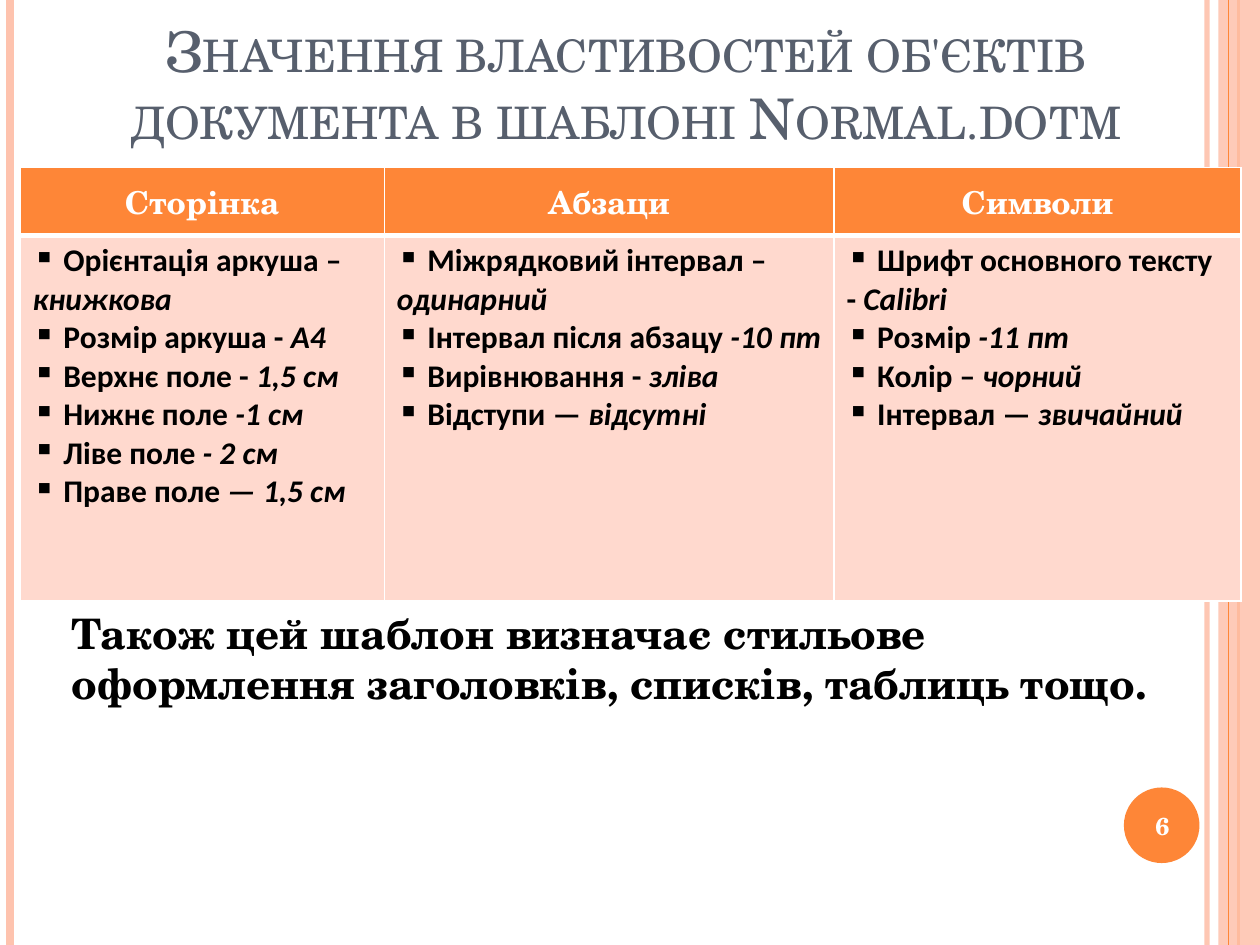
import pptx
import pptx.util
import pptx.dml.color
import pptx.enum.shapes
import pptx.enum.text
import pptx.oxml
from lxml import etree
from pptx.util import Inches

SERIF, SANS = "TeX Gyre Schola", "Calibri"
ORANGE, PEACH, PALE = "FE8637", "FEC3AE", "FFD9CE"
SLATE, WHITE, BLACK = "575F6D", "FFFFFF", "000000"
CENTER = pptx.enum.text.PP_ALIGN.CENTER
MIDDLE = pptx.enum.text.MSO_ANCHOR.MIDDLE
BOTTOM = pptx.enum.text.MSO_ANCHOR.BOTTOM

HEADING = "Значення властивостей об'єктів документа в шаблоні Normal.dotm"
CONCLUSION = "Також цей шаблон визначає стильове оформлення заголовків, списків, таблиць тощо."
PAGE_NUMBER = "6"
OBJECTS = [
    ("Сторінка", 2.89, [
        ("Орієнтація аркуша – ", "книжкова"),
        ("Розмір аркуша -", " А4"),
        ("Верхнє поле -", " 1,5 см"),
        ("Нижнє поле", " -1 см"),
        ("Ліве поле", " - 2 см"),
        ("Праве поле", " — 1,5 см"),
    ]),
    ("Абзаци", 3.57, [
        ("Міжрядковий інтервал – ", "одинарний"),
        ("Інтервал після абзацу", " -10 пт"),
        ("Вирівнювання - ", "зліва"),
        ("Відступи — ", "відсутні"),
    ]),
    ("Символи", 3.23, [
        ("Шрифт основного тексту - ", "Calibri"),
        ("Розмір", " -11 пт"),
        ("Колір – ", "чорний"),
        ("Інтервал — ", "звичайний"),
    ]),
]
ROW_HEIGHTS = [0.54, 2.9]
STRIPES_BEHIND = [(9.58, PEACH, 3, 93), (0.08, PEACH, 4.5, 100), (9.83, ORANGE, 1.5, 100)]
STRIPE_FRONT = (9.75, ORANGE, 0.75, 100)


def rgb(color):
    return pptx.dml.color.RGBColor.from_string(color)


def add_xml(parent, tag, **attributes):
    element = etree.SubElement(parent, pptx.oxml.ns.qn(tag))
    for key, value in attributes.items():
        element.set(key, str(value))
    return element


def set_opacity(fill, percent):
    color = fill._xPr.find(".//" + pptx.oxml.ns.qn("a:srgbClr"))
    add_xml(color, "a:alpha", val=percent * 1000)


def add_stripe(x, color, width, opacity):
    stripe = slide.shapes.add_connector(
        pptx.enum.shapes.MSO_CONNECTOR.STRAIGHT, Inches(x), 0, Inches(x), deck.slide_height)
    stripe.line.color.rgb = rgb(color)
    stripe.line.width = pptx.util.Pt(width)
    set_opacity(stripe.line.fill, opacity)
    add_xml(stripe._element.spPr, "a:effectLst")


def add_panel(kind, box, color):
    panel = slide.shapes.add_shape(kind, *map(Inches, box))
    panel.shadow.inherit = False
    panel.fill.solid()
    panel.fill.fore_color.rgb = rgb(color)
    panel.line.fill.background()
    return panel


def style(paragraph, size, color, bold=False, face=SERIF, align=None):
    paragraph.alignment = align
    font = paragraph.font
    font.name, font.size, font.bold = face, pptx.util.Pt(size), bold
    font.color.rgb = rgb(color)
    return font


def set_bullet(paragraph, char=None):
    props = paragraph._p.get_or_add_pPr()
    props.set("marL", "0")
    props.set("indent", "0")
    if char:
        add_xml(props, "a:buChar", char=char)
    else:
        add_xml(props, "a:buNone")


def place(shape, box, text, anchor):
    shape.left, shape.top, shape.width, shape.height = map(Inches, box)
    frame = shape.text_frame
    frame.word_wrap = True
    frame.auto_size = pptx.enum.text.MSO_AUTO_SIZE.NONE
    frame.vertical_anchor = anchor
    frame.text = text
    return frame.paragraphs[0]


def paint_cell(cell, color, bottom_width):
    props = cell._tc.get_or_add_tcPr()
    for side, width in zip("LRTB", (1, 1, 1, bottom_width)):
        border = add_xml(props, "a:ln" + side, w=pptx.util.Pt(width))
        add_xml(add_xml(border, "a:solidFill"), "a:srgbClr", val=WHITE)
    cell.fill.solid()
    cell.fill.fore_color.rgb = rgb(color)


def fill_header(cell, name):
    paint_cell(cell, ORANGE, 3)
    cell.vertical_anchor = MIDDLE
    cell.text = name
    style(cell.text_frame.paragraphs[0], 18, WHITE, True, align=CENTER)


def fill_properties(cell, properties):
    paint_cell(cell, PALE, 1)
    frame = cell.text_frame
    for index, (label, value) in enumerate(properties):
        paragraph = frame.add_paragraph() if index else frame.paragraphs[0]
        set_bullet(paragraph, "▪")
        style(paragraph, 18, BLACK, True, SANS)
        paragraph.add_run().text = " " + label
        setting = paragraph.add_run()
        setting.text = value
        setting.font.italic = True


deck = pptx.Presentation()
deck.slide_width, deck.slide_height = Inches(10), Inches(7.5)
slide = deck.slides.add_slide(deck.slide_layouts[1])
shape_kinds = pptx.enum.shapes.MSO_SHAPE

for stripe in STRIPES_BEHIND:
    add_stripe(*stripe)
band = add_panel(shape_kinds.RECTANGLE, (9.67, 0, 0.33, 7.5), PEACH)
set_opacity(band.fill, 87)
add_stripe(*STRIPE_FRONT)
add_panel(shape_kinds.OVAL, (8.92, 6.25, 0.6, 0.6), ORANGE)

title = place(slide.shapes.title, (0.47, 0, 9, 1.25), HEADING, BOTTOM)
style(title, 32, SLATE, align=CENTER)._element.set("cap", "small")

conclusion = place(slide.placeholders[1], (0.47, 4.77, 9, 1.56), CONCLUSION,
                   pptx.enum.text.MSO_ANCHOR.TOP)
conclusion.space_before = pptx.util.Pt(6)
set_bullet(conclusion)
style(conclusion, 24, BLACK, True)

number_box = slide.shapes.add_textbox(0, 0, 0, 0)
number = place(number_box, (8.89, 6.27, 0.67, 0.57), PAGE_NUMBER, MIDDLE)
style(number, 14, WHITE, True, align=CENTER)

table = slide.shapes.add_table(
    len(ROW_HEIGHTS), len(OBJECTS), Inches(0.16), Inches(1.33),
    Inches(sum(width for _, width, _ in OBJECTS)), Inches(sum(ROW_HEIGHTS))).table
for row, height in zip(table.rows, ROW_HEIGHTS):
    row.height = Inches(height)
for column, (name, width, properties) in enumerate(OBJECTS):
    table.columns[column].width = Inches(width)
    fill_header(table.cell(0, column), name)
    fill_properties(table.cell(1, column), properties)

deck.save("out.pptx")
